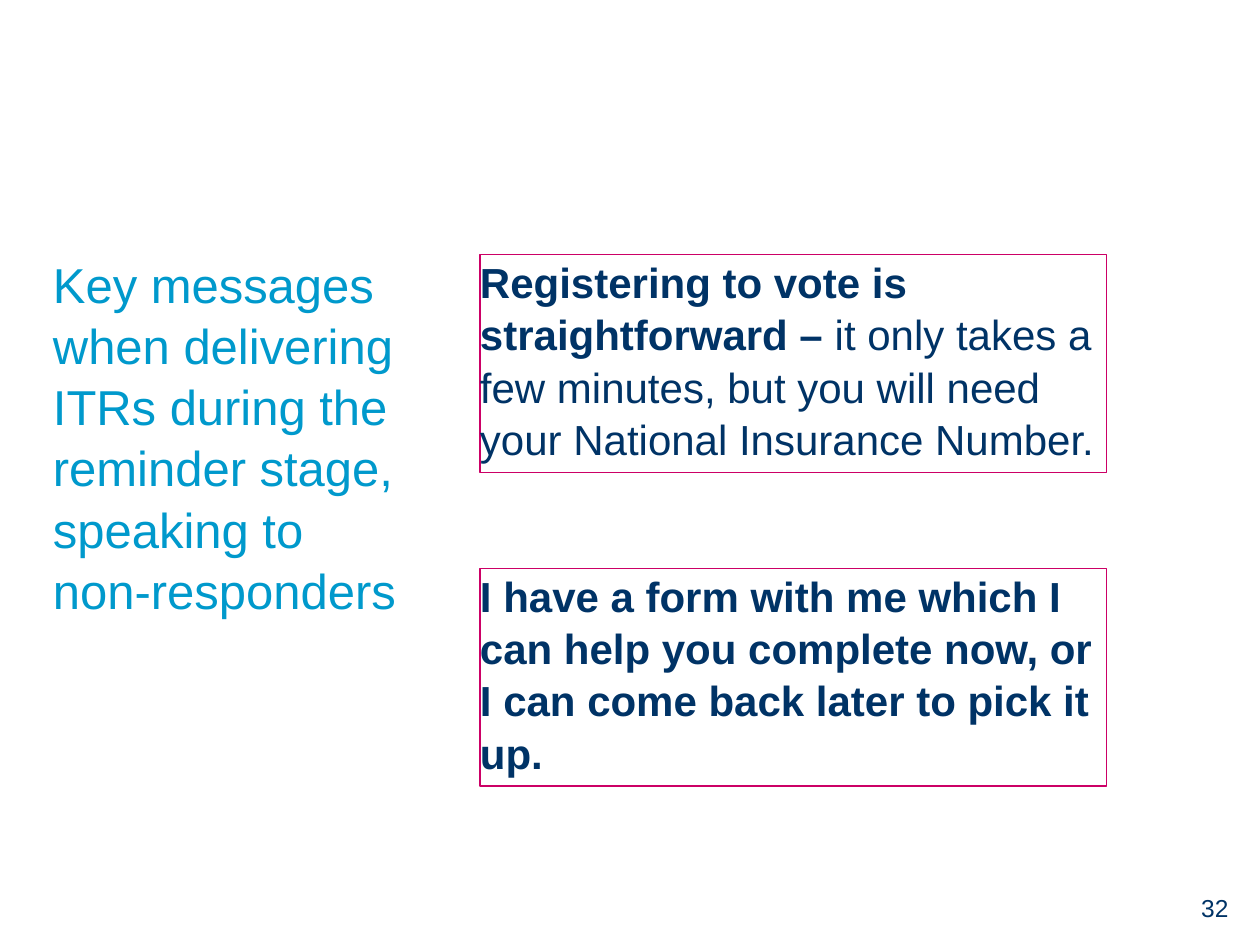
from dataclasses import dataclass

from pptx import Presentation
from pptx.dml.color import RGBColor
from pptx.enum.shapes import MSO_SHAPE
from pptx.enum.text import MSO_ANCHOR, PP_ALIGN
from pptx.slide import Slide
from pptx.text.text import TextFrame
from pptx.util import Inches, Pt

FONT = "Arial"
BLUE = RGBColor(0x00, 0x99, 0xCC)
NAVY = RGBColor(0x00, 0x33, 0x66)
MAGENTA = RGBColor(0xCC, 0x00, 0x66)
LINE_SPACING = 1.04


@dataclass(frozen=True)
class Message:
    top: float
    bold_text: str
    plain_text: str = ""


MESSAGES = [
    Message(
        4.51,
        "I have a form with me which I can help you complete now, or "
        "I can come back later to pick it up.",
    ),
    Message(
        2.02,
        "Registering to vote is straightforward – ",
        "it only takes a few minutes, but you will need your National Insurance Number.",
    ),
]


def prepare_frame(frame: TextFrame, align: PP_ALIGN = PP_ALIGN.LEFT) -> None:
    frame.word_wrap = True
    frame.vertical_anchor = MSO_ANCHOR.TOP
    frame.margin_left = frame.margin_right = Inches(0)
    frame.margin_top = frame.margin_bottom = Inches(0)
    para = frame.paragraphs[0]
    para.alignment = align
    para.line_spacing = LINE_SPACING


def add_span(
    frame: TextFrame, text: str, size: int, color: RGBColor, bold: bool = False
) -> None:
    span = frame.paragraphs[0].add_run()
    span.text = text
    span.font.name = FONT
    span.font.size = Pt(size)
    span.font.bold = bold
    span.font.color.rgb = color


def add_title(slide: Slide, text: str) -> None:
    title = slide.shapes.title
    title.left, title.top = Inches(0.42), Inches(2)
    title.width, title.height = Inches(2.75), Inches(4.67)
    prepare_frame(title.text_frame)
    add_span(title.text_frame, text, 28, BLUE)


def add_page_number(slide: Slide, number: str) -> None:
    box = slide.shapes.add_textbox(Inches(7.67), Inches(7.08), Inches(2.08), Inches(0.25))
    prepare_frame(box.text_frame, PP_ALIGN.RIGHT)
    add_span(box.text_frame, number, 14, NAVY)


def add_message(slide: Slide, message: Message) -> None:
    box = slide.shapes.add_shape(
        MSO_SHAPE.RECTANGLE, Inches(3.81), Inches(message.top), Inches(4.97), Inches(1.73)
    )
    box.shadow.inherit = False
    box.fill.background()
    box.line.color.rgb = MAGENTA
    box.line.width = Pt(0.75)
    prepare_frame(box.text_frame)
    add_span(box.text_frame, message.bold_text, 24, NAVY, bold=True)
    if message.plain_text:
        add_span(box.text_frame, message.plain_text, 24, NAVY)


def main() -> None:
    deck = Presentation()
    deck.slide_width, deck.slide_height = Inches(10), Inches(7.5)
    slide = deck.slides.add_slide(deck.slide_layouts[5])
    add_title(
        slide,
        "Key messages when delivering ITRs during the reminder stage, "
        "speaking to non-responders",
    )
    add_page_number(slide, "32")
    for message in MESSAGES:
        add_message(slide, message)
    deck.save("out.pptx")


if __name__ == "__main__":
    main()
